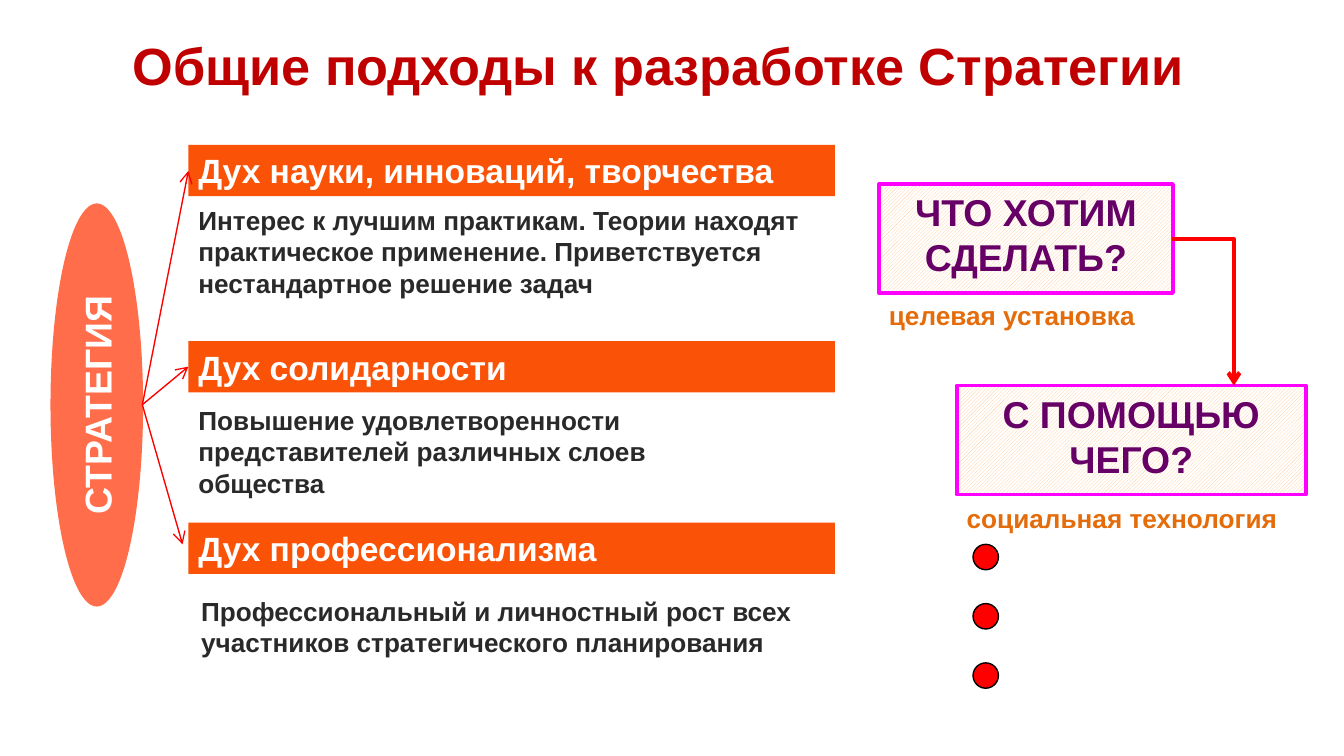
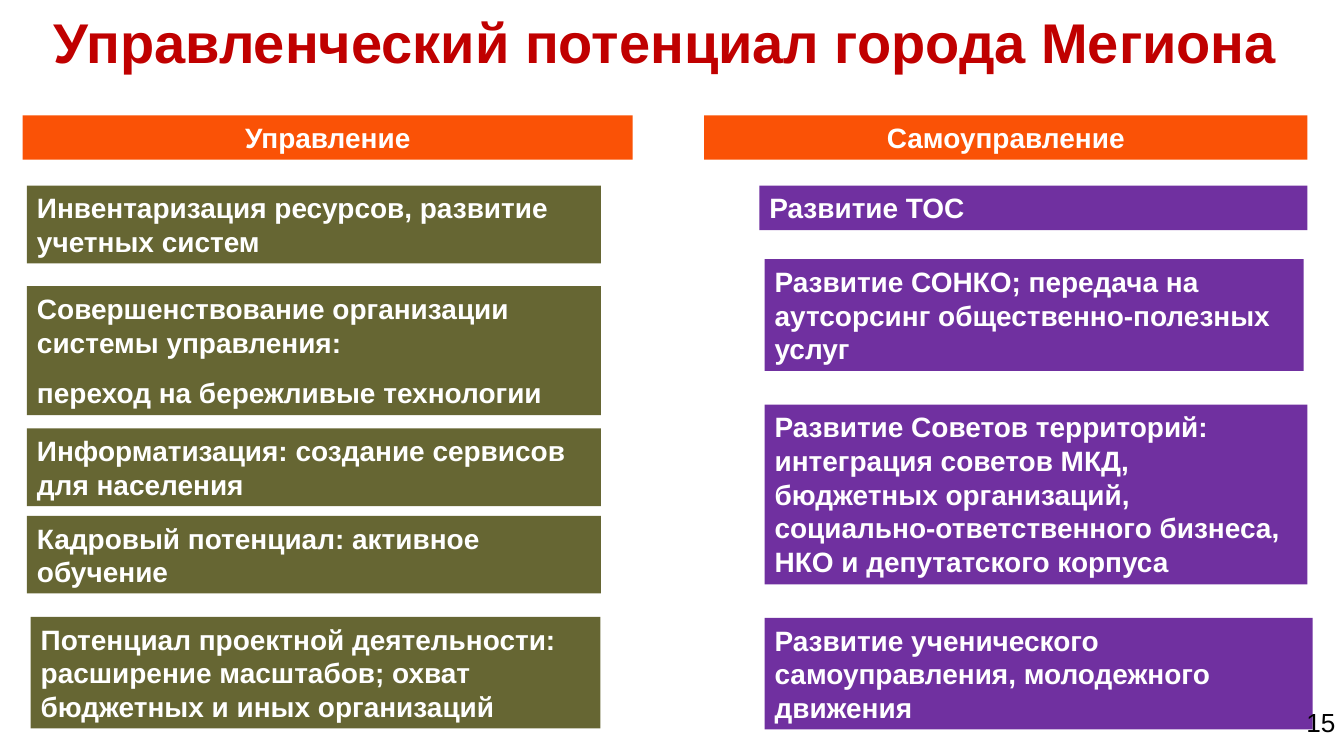
from dataclasses import dataclass

from lxml.etree import SubElement
from pptx import Presentation
from pptx.dml.color import RGBColor
from pptx.enum.dml import MSO_PATTERN
from pptx.enum.shapes import MSO_CONNECTOR as Link, MSO_SHAPE as Kind
from pptx.enum.text import MSO_ANCHOR as Anchor, PP_ALIGN as Align
from pptx.oxml.ns import qn
from pptx.shapes.autoshape import Shape
from pptx.shapes.connector import Connector
from pptx.slide import Slide
from pptx.util import Cm, Pt

FONT = "Arial"
HUES = {
    "title": "C00000", "band": "FA5206", "oval": "FF6D4B", "olive": "666633",
    "violet": "7030A0", "white": "FFFFFF", "black": "000000", "dark": "292929",
    "red": "FF0000", "pink": "FF00FF", "plum": "660066", "peach": "FFCC99",
    "amber": "E46C0A",
}


@dataclass(frozen=True)
class Style:
    size: float
    ink: str = "white"
    fill: str = ""
    align: Align = Align.LEFT
    after: float = 0
    bold: bool = True
    lead: float = 1.0


@dataclass(frozen=True)
class Box:
    x: float
    y: float
    w: float
    h: float
    text: str


@dataclass(frozen=True)
class Arrow:
    x1: float
    y1: float
    x2: float
    y2: float
    width: float = 0.75
    bent: bool = False


TITLE = Style(28, "title", align=Align.CENTER)
CITY = Style(30, "title", align=Align.CENTER, lead=0.93)
BAND = Style(18, fill="band", after=9)
NOTE = Style(14, "dark")
OVAL = Style(20, fill="oval", align=Align.CENTER)
GOAL = Style(20, "plum", align=Align.CENTER)
LABEL = Style(14, "amber")
HEAD = Style(15, fill="band", align=Align.CENTER, after=9)
LEFT = Style(15, fill="olive", after=9)
RIGHT = Style(15, fill="violet", after=9)
PAGE = Style(14, "black", align=Align.RIGHT, bold=False, lead=0.93)

BANDS = [
    Box(3.56, y, 12.22, 0.97, text)
    for y, text in (
        (2.74, "Дух науки, инноваций, творчества"),
        (6.45, "Дух солидарности"),
        (9.88, "Дух профессионализма"),
    )
]
NOTES = [
    Box(3.56, 3.76, 12.22, 1.98,
        "Интерес к лучшим практикам. Теории находят практическое применение. "
        "Приветствуется нестандартное решение задач"),
    Box(3.56, 7.54, 12.22, 1.98,
        "Повышение удовлетворенности представителей различных слоев\nобщества"),
    Box(3.61, 11.15, 12.17, 1.4,
        "Профессиональный и личностный рост всех участников "
        "стратегического планирования"),
]
GOALS = [
    Box(16.61, 3.48, 5.56, 2.06, "ЧТО ХОТИМ СДЕЛАТЬ?"),
    Box(18.08, 7.29, 6.6, 2.06, "С ПОМОЩЬЮ ЧЕГО?"),
]
LABELS = [
    Box(16.61, 5.56, 5.54, 0.79, "целевая установка"),
    Box(18.08, 9.4, 6.73, 0.79, "социальная технология"),
]
ARROWS = [
    Arrow(2.69, 7.65, x, y) for x, y in ((3.56, 3.23), (3.56, 6.93), (3.45, 10.29))
] + [Arrow(22.15, 4.52, 23.32, 7.29, 2.25, True)]

HEADS = [
    Box(0.43, 2.18, 11.53, 0.84, "Управление"),
    Box(13.31, 2.18, 11.4, 0.84, "Самоуправление"),
]
STATE = [
    Box(0.51, 3.51, 10.85, 1.47, "Инвентаризация ресурсов, развитие учетных систем"),
    Box(0.51, 5.41, 10.85, 2.44,
        "Совершенствование организации системы управления:\n"
        "переход на бережливые технологии"),
    Box(0.51, 8.1, 10.85, 1.47, "Информатизация: создание сервисов для населения"),
    Box(0.51, 9.75, 10.85, 1.47, "Кадровый потенциал: активное обучение"),
    Box(0.58, 11.66, 10.77, 2.11,
        "Потенциал проектной деятельности: расширение масштабов; "
        "охват бюджетных и иных организаций"),
]
CIVIC = [
    Box(14.35, 3.51, 10.36, 0.84, "Развитие ТОС"),
    Box(14.45, 4.9, 10.19, 2.11,
        "Развитие СОНКО; передача на аутсорсинг общественно-полезных услуг"),
    Box(14.45, 7.65, 10.26, 3.4,
        "Развитие Советов территорий: интеграция советов МКД, "
        "бюджетных организаций, социально-ответственного бизнеса, "
        "НКО и депутатского корпуса"),
    Box(14.45, 11.68, 10.36, 2.11,
        "Развитие ученического самоуправления, молодежного движения"),
]


def hue(name: str) -> RGBColor:
    return RGBColor.from_string(HUES[name])


def write(shape: Shape, text: str, style: Style) -> None:
    frame = shape.text_frame
    frame.word_wrap = True
    frame.vertical_anchor = Anchor.TOP
    frame.margin_left = frame.margin_right = Cm(0.19)
    frame.margin_top = frame.margin_bottom = Cm(0.1)
    frame.text = text
    for para in frame.paragraphs:
        para.alignment = style.align
        para.space_after = Pt(style.after)
        para.line_spacing = style.lead
        para.font.name = FONT
        para.font.size = Pt(style.size)
        para.font.bold = style.bold
        para.font.color.rgb = hue(style.ink)


def form(slide: Slide, kind: Kind, box: Box, fill: str) -> Shape:
    shape = slide.shapes.add_shape(kind, Cm(box.x), Cm(box.y), Cm(box.w), Cm(box.h))
    shape.shadow.inherit = False
    shape.fill.solid()
    shape.fill.fore_color.rgb = hue(fill)
    shape.line.fill.background()
    return shape


def edge(shape: Shape | Connector, color: str, width: float) -> None:
    shape.line.color.rgb = hue(color)
    shape.line.width = Pt(width)


def panel(slide: Slide, box: Box, style: Style, kind: Kind = Kind.RECTANGLE) -> Shape:
    if style.fill:
        shape = form(slide, kind, box, style.fill)
    else:
        shape = slide.shapes.add_textbox(Cm(box.x), Cm(box.y), Cm(box.w), Cm(box.h))
    write(shape, box.text, style)
    return shape


def goal(slide: Slide, box: Box) -> None:
    shape = form(slide, Kind.RECTANGLE, box, "white")
    shape.fill.patterned()
    shape.fill.pattern = MSO_PATTERN.LIGHT_UPWARD_DIAGONAL
    shape.fill.fore_color.rgb = hue("peach")
    shape.fill.back_color.rgb = hue("white")
    edge(shape, "pink", 2)
    write(shape, box.text, GOAL)


def link(slide: Slide, arrow: Arrow) -> None:
    kind = Link.ELBOW if arrow.bent else Link.STRAIGHT
    line = slide.shapes.add_connector(
        kind, Cm(arrow.x1), Cm(arrow.y1), Cm(arrow.x2), Cm(arrow.y2))
    edge(line, "red", arrow.width)
    props = line._element.spPr
    if arrow.bent:
        props.find(qn("a:prstGeom")).set("prst", "bentConnector2")
    SubElement(props.find(qn("a:ln")), qn("a:tailEnd"), type="arrow")
    SubElement(props, qn("a:effectLst"))


def plan(slide: Slide) -> None:
    panel(slide, Box(0.97, 0.53, 22.94, 1.45, "Общие подходы к разработке Стратегии"), TITLE)
    for boxes, style in ((BANDS, BAND), (NOTES, NOTE), (LABELS, LABEL)):
        for box in boxes:
            panel(slide, box, style)
    oval = panel(slide, Box(-1.98, 6.78, 7.62, 1.75, "СТРАТЕГИЯ"), OVAL, Kind.OVAL)
    oval.rotation = 270
    oval.text_frame.vertical_anchor = Anchor.MIDDLE
    for box in GOALS:
        goal(slide, box)
    for row in range(3):
        dot = form(slide, Kind.OVAL, Box(18.39, 10.29 + 1.12 * row, 0.48, 0.48, ""), "red")
        edge(dot, "black", 0.75)
    for arrow in ARROWS:
        link(slide, arrow)


def city(slide: Slide) -> None:
    panel(slide, Box(0, 0.15, 25.15, 2.13, "Управленческий потенциал города Мегиона"), CITY)
    for boxes, style in ((HEADS, HEAD), (STATE, LEFT), (CIVIC, RIGHT)):
        for box in boxes:
            panel(slide, box, style)
    panel(slide, Box(20.98, 13.31, 4.45, 0.99, "15"), PAGE)


def main() -> None:
    deck = Presentation()
    deck.slide_width, deck.slide_height = Cm(25.4), Cm(14.29)
    for draw in (plan, city):
        draw(deck.slides.add_slide(deck.slide_layouts[6]))
    deck.save("out.pptx")


if __name__ == "__main__":
    main()
